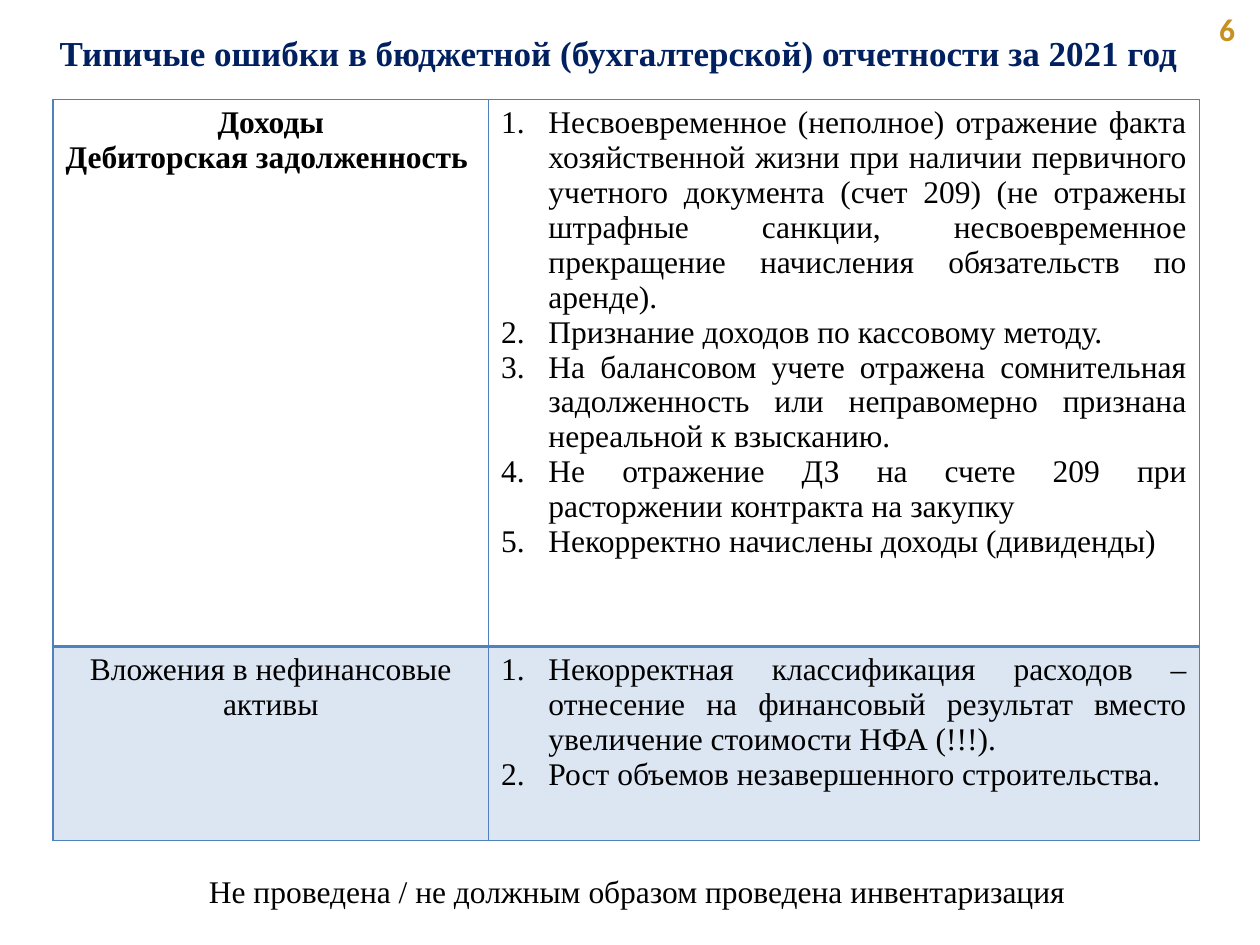
from lxml import etree
from pptx import Presentation
from pptx import util as u
from pptx.dml.color import RGBColor
from pptx.enum import text
from pptx.oxml import ns

NAVY = RGBColor(0x00, 0x20, 0x60)
GOLD = RGBColor(0xC7, 0x90, 0x23)
BLACK = RGBColor(0, 0, 0)
BORDER = RGBColor(0x4F, 0x81, 0xBD)
PALE_BLUE = RGBColor(0xDC, 0xE6, 0xF2)
SERIF, SANS = "Times New Roman", "Calibri"
CENTER, JUSTIFY = text.PP_ALIGN.CENTER, text.PP_ALIGN.JUSTIFY

WIDTH, HEIGHT = 10, 7.5
LEFT, RIGHT = 0.42, 9.52
COLUMN_SHARES = (0.38, 0.62)
ROW_HEIGHTS = (4.34, 1.54)
INDENT = 0.375

# Topic lines, whether the topic is bold, row fill, numbered errors
ROWS = [
    (["Доходы", "Дебиторская задолженность "], True, None, [
        "Несвоевременное (неполное) отражение факта хозяйственной жизни при "
        "наличии первичного учетного документа (счет 209) (не отражены "
        "штрафные санкции, несвоевременное прекращение начисления "
        "обязательств по аренде).",
        "Признание доходов по кассовому методу.",
        "На балансовом учете отражена сомнительная задолженность или "
        "неправомерно признана нереальной к взысканию.",
        "Не отражение ДЗ на счете 209 при расторжении контракта на закупку",
        "Некорректно начислены доходы (дивиденды)",
    ]),
    (["Вложения в нефинансовые активы"], False, PALE_BLUE, [
        "Некорректная классификация расходов – отнесение на финансовый "
        "результат вместо увеличение стоимости НФА (!!!).",
        "Рост объемов незавершенного строительства.",
    ]),
]


def write(tf, lines, size=18, font=SERIF, color=BLACK, bold=False, align=None):
    tf.text = "\n".join(lines)
    for p in tf.paragraphs:
        p.alignment = align
        for r in p.runs:
            r.font.size, r.font.name, r.font.bold = u.Pt(size), font, bold
            r.font.color.rgb = color


def number(tf):
    """Number the paragraphs with a hanging indent."""
    for p in tf.paragraphs:
        pPr = p._p.get_or_add_pPr()
        pPr.set("marL", str(u.Inches(INDENT)))
        pPr.set("indent", str(-u.Inches(INDENT)))
        etree.SubElement(pPr, ns.qn("a:buFont"), typeface="+mj-lt")
        etree.SubElement(pPr, ns.qn("a:buAutoNum"), type="arabicPeriod")


def set_borders(cell, **widths):
    """Draw the cell's sides; widths in points by side: L, R, T, B."""
    tcPr = cell._tc.get_or_add_tcPr()
    for side, width in widths.items():
        ln = etree.SubElement(tcPr, ns.qn(f"a:ln{side}"), w=str(u.Pt(width)))
        fill = etree.SubElement(ln, ns.qn("a:solidFill"))
        etree.SubElement(fill, ns.qn("a:srgbClr"), val=str(BORDER))


def add_text(s, box, line, **style):
    sp = s.shapes.add_textbox(*map(u.Inches, box))
    sp.text_frame.word_wrap = True
    write(sp.text_frame, [line], **style)


def add_error_table(s, box):
    frame = s.shapes.add_table(len(ROWS), 2, *map(u.Inches, box))
    table = frame.table
    table.first_row = table.horz_banding = False
    for column, share in zip(table.columns, COLUMN_SHARES):
        column.width = u.Inches(box[2] * share)
    for i, (topic, bold, fill, errors) in enumerate(ROWS):
        table.rows[i].height = u.Inches(ROW_HEIGHTS[i])
        topic_cell, error_cell = table.cell(i, 0), table.cell(i, 1)
        write(topic_cell.text_frame, topic, bold=bold, align=CENTER)
        write(error_cell.text_frame, errors, align=JUSTIFY)
        number(error_cell.text_frame)
        top, bottom = (1, 2) if i == 0 else (2, 1)
        for cell in (topic_cell, error_cell):
            set_borders(cell, L=1, R=1, T=top, B=bottom)
            if fill is None:
                cell.fill.background()
            else:
                cell.fill.solid()
                cell.fill.fore_color.rgb = fill


def main():
    prs = Presentation()
    prs.slide_width, prs.slide_height = u.Inches(WIDTH), u.Inches(HEIGHT)
    s = prs.slides.add_slide(prs.slide_layouts[6])
    add_text(s, (0.3, 0.2, RIGHT - 0.3, 0.44),
             "Типичые ошибки в бюджетной (бухгалтерской) отчетности за 2021 год",
             size=20, color=NAVY, bold=True, align=CENTER)
    add_text(s, (RIGHT, 0.03, WIDTH - RIGHT, 0.4), " 6",
             font=SANS, color=GOLD, bold=True)
    add_error_table(s, (LEFT, 0.79, RIGHT - LEFT, sum(ROW_HEIGHTS)))
    add_text(s, (1.56, 6.87, 7.22, 0.4),
             "Не проведена / не должным образом проведена инвентаризация")
    prs.save("out.pptx")


if __name__ == "__main__":
    main()
